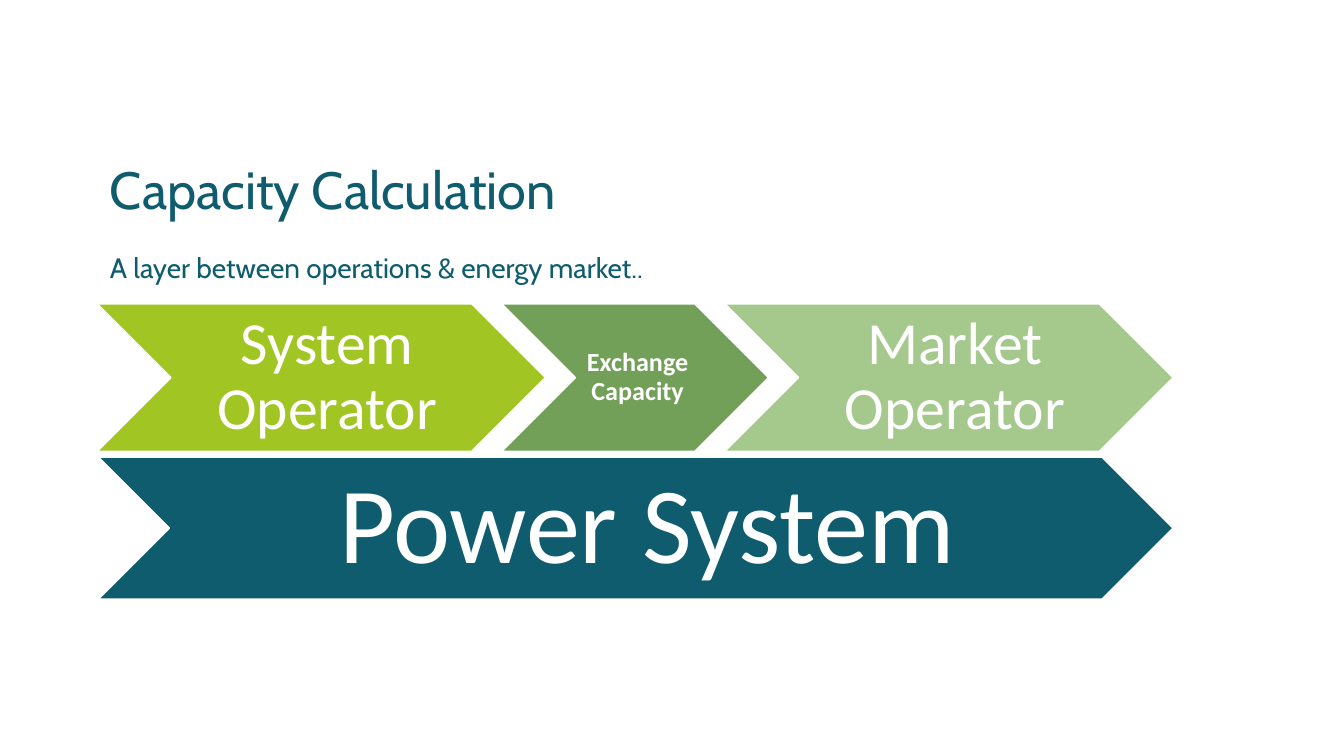
from dataclasses import dataclass

from pptx import Presentation
from pptx.dml.color import RGBColor
from pptx.enum.shapes import MSO_SHAPE
from pptx.enum.text import MSO_ANCHOR, PP_ALIGN
from pptx.slide import Slide
from pptx.text.text import TextFrame
from pptx.util import Inches, Pt

CHEVRON = MSO_SHAPE.CHEVRON
TOP, MIDDLE = MSO_ANCHOR.TOP, MSO_ANCHOR.MIDDLE
LEFT, CENTER = PP_ALIGN.LEFT, PP_ALIGN.CENTER

TEAL = RGBColor(0x0E, 0x5C, 0x6E)
LIME = RGBColor(0xA1, 0xC5, 0x22)
GREEN = RGBColor(0x73, 0xA0, 0x59)
SAGE = RGBColor(0xA5, 0xC9, 0x8C)
WHITE = RGBColor(0xFF, 0xFF, 0xFF)

WIDTH = 10
HEIGHT = WIDTH * 9 / 16
OVERLAP = 0.33


@dataclass
class Style:
    size: float
    font: str
    color: RGBColor
    bold: bool = False
    align: PP_ALIGN = CENTER
    anchor: MSO_ANCHOR = MIDDLE


@dataclass
class Arrow:
    text: str
    width: float
    fill: RGBColor
    size: float
    inset: float
    pad: float
    bold: bool = False


def write(frame: TextFrame, text: str, style: Style) -> None:
    frame.word_wrap = True
    frame.vertical_anchor = style.anchor
    para = frame.paragraphs[0]
    para.alignment = style.align
    para.line_spacing = 0.9
    run = para.add_run()
    run.text = text
    run.font.size = Pt(style.size)
    run.font.name = style.font
    run.font.bold = style.bold
    run.font.color.rgb = style.color


def add_label(slide: Slide, text: str, top: float, height: float,
              size: float, anchor: MSO_ANCHOR) -> None:
    box = slide.shapes.add_textbox(
        Inches(0.72), Inches(top), Inches(7.7), Inches(height))
    write(box.text_frame, text, Style(size, "Cabin", TEAL, False, LEFT, anchor))


def add_arrow(slide: Slide, arrow: Arrow, left: float, top: float,
              height: float) -> None:
    shape = slide.shapes.add_shape(
        CHEVRON, Inches(left), Inches(top), Inches(arrow.width), Inches(height))
    shape.shadow.inherit = False
    shape.fill.solid()
    shape.fill.fore_color.rgb = arrow.fill
    shape.line.color.rgb = WHITE
    shape.line.width = Pt(1)
    frame = shape.text_frame
    frame.margin_left = Inches(arrow.inset)
    frame.margin_right = Inches(arrow.pad)
    frame.margin_top = frame.margin_bottom = Inches(arrow.pad)
    write(frame, arrow.text, Style(arrow.size, "Calibri", WHITE, arrow.bold))


def add_chain(slide: Slide, chain: list[Arrow], left: float, top: float,
              height: float) -> None:
    for arrow in chain:
        add_arrow(slide, arrow, left, top, height)
        left += arrow.width - OVERLAP


def main() -> None:
    deck = Presentation()
    deck.slide_width, deck.slide_height = Inches(WIDTH), Inches(HEIGHT)
    slide = deck.slides.add_slide(deck.slide_layouts[6])

    add_label(slide, "A layer between operations & energy market..",
              1.84, 0.44, 15, TOP)
    add_label(slide, "Capacity Calculation", 1.17, 0.52, 28, MIDDLE)

    roles = [
        Arrow("System Operator", 3.34, LIME, 32, 0.14, 0.05),
        Arrow("Exchange Capacity", 1.99, GREEN, 14, 0.06, 0.02, True),
        Arrow("Market Operator", 3.34, SAGE, 32, 0.14, 0.05),
    ]
    base = [Arrow("Power System", 8, TEAL, 58, 0.25, 0.08)]
    add_chain(slide, roles, 0.72, 2.26, 1.1)
    add_chain(slide, base, 0.73, 3.4, 1.06)

    deck.save("out.pptx")


if __name__ == "__main__":
    main()
